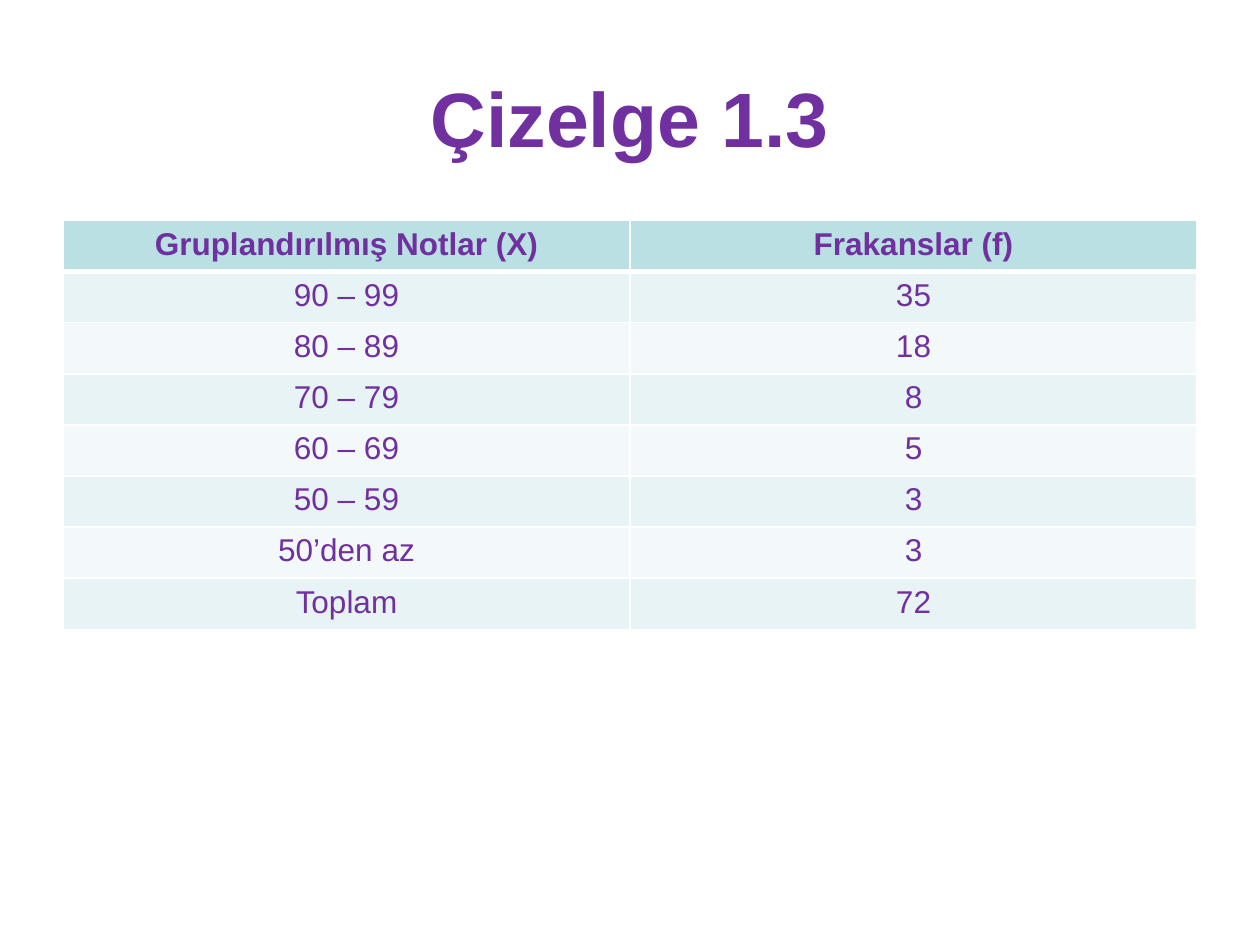
import pptx
import pptx.util
import pptx.dml.color
import pptx.enum.text
import lxml.etree

Pt = pptx.util.Pt
TEXT = pptx.enum.text
NS = "http://schemas.openxmlformats.org/drawingml/2006/main"


def shade(code):
    return pptx.dml.color.RGBColor.from_string(code)


class Deck:
    font = "Arial"
    ink = "7030A0"
    line = "FFFFFF"
    head = "BBE0E3"
    bands = ("E7F3F4", "F3F9FA")

    def __init__(self, wide, high):
        self.show = pptx.Presentation()
        self.show.slide_width = Pt(wide)
        self.show.slide_height = Pt(high)
        self.slide = self.show.slides.add_slide(self.show.slide_layouts[6])

    def label(self, frame, text, size, bold):
        frame.text = text
        for para in frame.paragraphs:
            para.alignment = TEXT.PP_ALIGN.CENTER
            for run in para.runs:
                run.font.name = self.font
                run.font.size = Pt(size)
                run.font.bold = bold
                run.font.color.rgb = shade(self.ink)

    def title(self, text, left, top, wide, high):
        box = self.slide.shapes.add_textbox(Pt(left), Pt(top), Pt(wide), Pt(high))
        frame = box.text_frame
        frame.word_wrap = True
        frame.vertical_anchor = TEXT.MSO_ANCHOR.MIDDLE
        self.label(frame, text, 44, True)

    def edge(self, cell, side, width):
        props = cell._tc.get_or_add_tcPr()
        line = lxml.etree.SubElement(props, f"{{{NS}}}ln{side}", w=str(Pt(width)))
        fill = lxml.etree.SubElement(line, f"{{{NS}}}solidFill")
        lxml.etree.SubElement(fill, f"{{{NS}}}srgbClr", val=self.line)

    def table(self, rows, left, top, wide, step):
        count = len(rows[0])
        grid = self.slide.shapes.add_table(
            len(rows), count, Pt(left), Pt(top), Pt(wide), Pt(step * len(rows))
        ).table
        for col in grid.columns:
            col.width = Pt(wide / count)
        for i, row in enumerate(rows):
            grid.rows[i].height = Pt(step)
            for j, text in enumerate(row):
                cell = grid.cell(i, j)
                widths = {"L": 1, "R": 1, "T": 3 if i == 1 else 1, "B": 3 if i == 0 else 1}
                for side, width in widths.items():
                    self.edge(cell, side, width)
                cell.fill.solid()
                cell.fill.fore_color.rgb = shade(self.bands[(i - 1) % 2] if i else self.head)
                self.label(cell.text_frame, text, 18, i == 0)


def main():
    rows = [
        ("Gruplandırılmış Notlar (X)", "Frakanslar (f)"),
        ("90 – 99", "35"),
        ("80 – 89", "18"),
        ("70 – 79", "8"),
        ("60 – 69", "5"),
        ("50 – 59", "3"),
        ("50’den az", "3"),
        ("Toplam", "72"),
    ]
    deck = Deck(720, 540)
    deck.title("Çizelge 1.3", 36, 21.6, 648, 90)
    deck.table(rows, 36, 126, 648, 29.2)
    deck.show.save("out.pptx")


if __name__ == "__main__":
    main()
